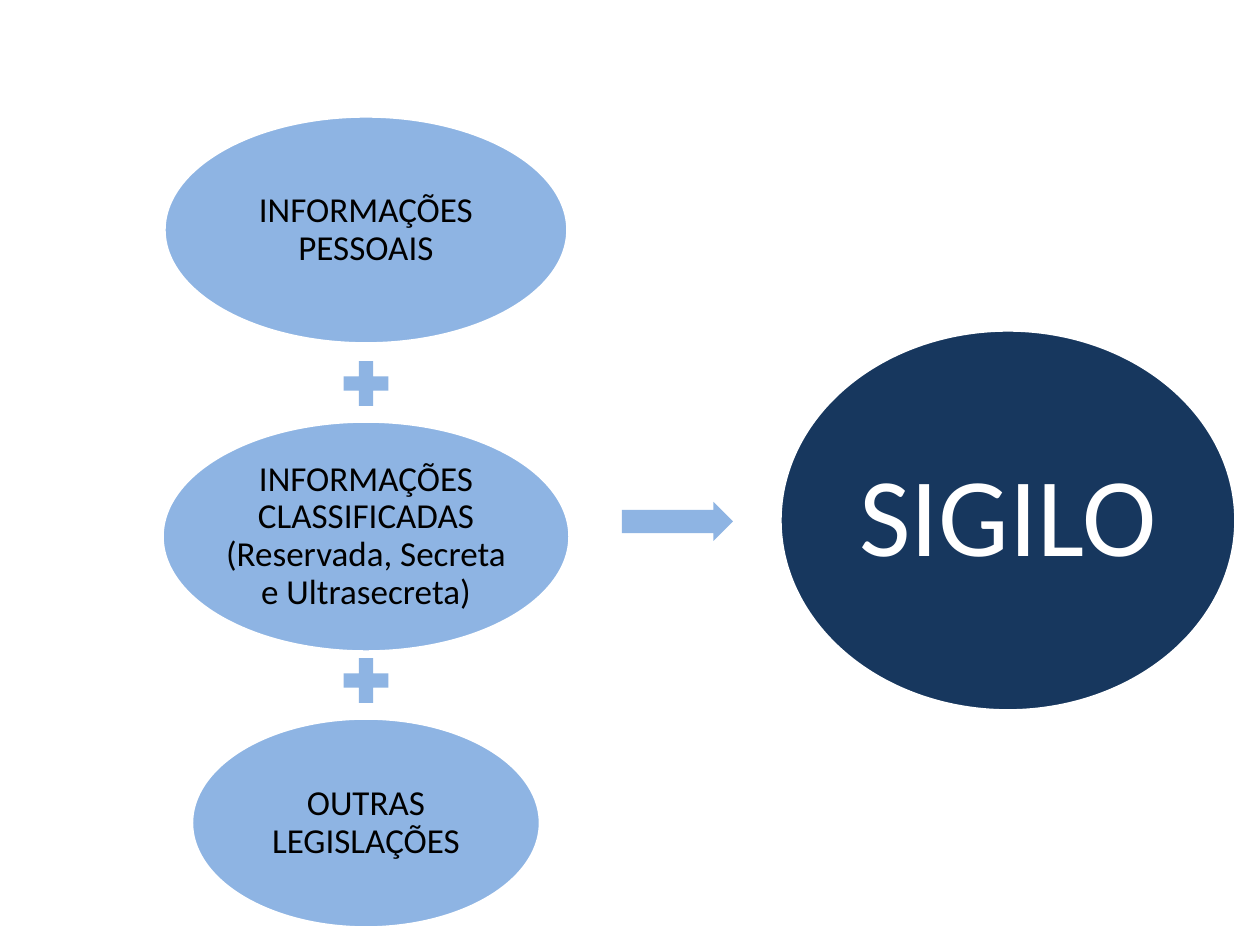
from pptx import Presentation
from pptx.dml.color import RGBColor
from pptx.enum.shapes import MSO_SHAPE
from pptx.enum.text import MSO_ANCHOR, PP_ALIGN
from pptx.util import Emu, Inches, Pt

ELLIPSE = MSO_SHAPE.OVAL
PLUS = MSO_SHAPE.MATH_PLUS
ARROW = MSO_SHAPE.RIGHT_ARROW
MIDDLE = MSO_ANCHOR.MIDDLE
CENTER = PP_ALIGN.CENTER

COLORS = {"light": "8EB4E3", "navy": "17375E", "white": "FFFFFF", "black": "000000"}
FONT = "Calibri"
COLUMN_CENTER = 366
PLUS_SIZE = 61

# top, width, height, label
SOURCES = [
    (116, 404, 228, "INFORMAÇÕES PESSOAIS"),
    (421, 408, 231, "INFORMAÇÕES CLASSIFICADAS (Reservada, Secreta e Ultrasecreta)"),
    (718, 349, 210, "OUTRAS LEGISLAÇÕES"),
]
PLUS_TOPS = [353, 650]


def px(length):
    return Emu(round(length * 914400 / 126))


def color(name):
    return RGBColor.from_string(COLORS[name])


def add_filled_shape(slide, kind, left, top, width, height, fill):
    shape = slide.shapes.add_shape(kind, px(left), px(top), px(width), px(height))
    shape.shadow.inherit = False
    shape.fill.solid()
    shape.fill.fore_color.rgb = color(fill)
    shape.line.fill.background()
    return shape


def add_ellipse(slide, left, top, width, height, label, fill, text_color, size, inset):
    """Add a white-edged ellipse with its label centred inside."""
    ellipse = add_filled_shape(slide, ELLIPSE, left, top, width, height, fill)
    ellipse.line.color.rgb = color("white")
    ellipse.line.width = Pt(2)
    frame = ellipse.text_frame
    frame.word_wrap = True
    frame.vertical_anchor = MIDDLE
    frame.margin_left = frame.margin_right = px(inset)
    frame.margin_top = frame.margin_bottom = px(inset)
    para = frame.paragraphs[0]
    para.text = label
    para.alignment = CENTER
    para.line_spacing = 0.9
    para.font.name = FONT
    para.font.size = Pt(size)
    para.font.color.rgb = color(text_color)


def add_sources(slide):
    """Stack the source ellipses and plus signs on one centre line."""
    for top, width, height, label in SOURCES:
        add_ellipse(slide, COLUMN_CENTER - width / 2, top, width, height,
                    label, "light", "black", 20, 4)
    for top in PLUS_TOPS:
        add_filled_shape(slide, PLUS, COLUMN_CENTER - PLUS_SIZE / 2, top,
                         PLUS_SIZE, PLUS_SIZE, "light")


def add_result(slide):
    arrow = add_filled_shape(slide, ARROW, 622, 502, 111, 39, "light")
    arrow.adjustments[0] = 0.6
    arrow.adjustments[1] = 0.5
    add_ellipse(slide, 780, 330, 456, 381, "SIGILO", "navy", "white", 64, 11)


def main():
    deck = Presentation()
    deck.slide_width = Inches(10)
    deck.slide_height = Inches(7.5)
    slide = deck.slides.add_slide(deck.slide_layouts[6])
    add_sources(slide)
    add_result(slide)
    deck.save("out.pptx")


if __name__ == "__main__":
    main()
